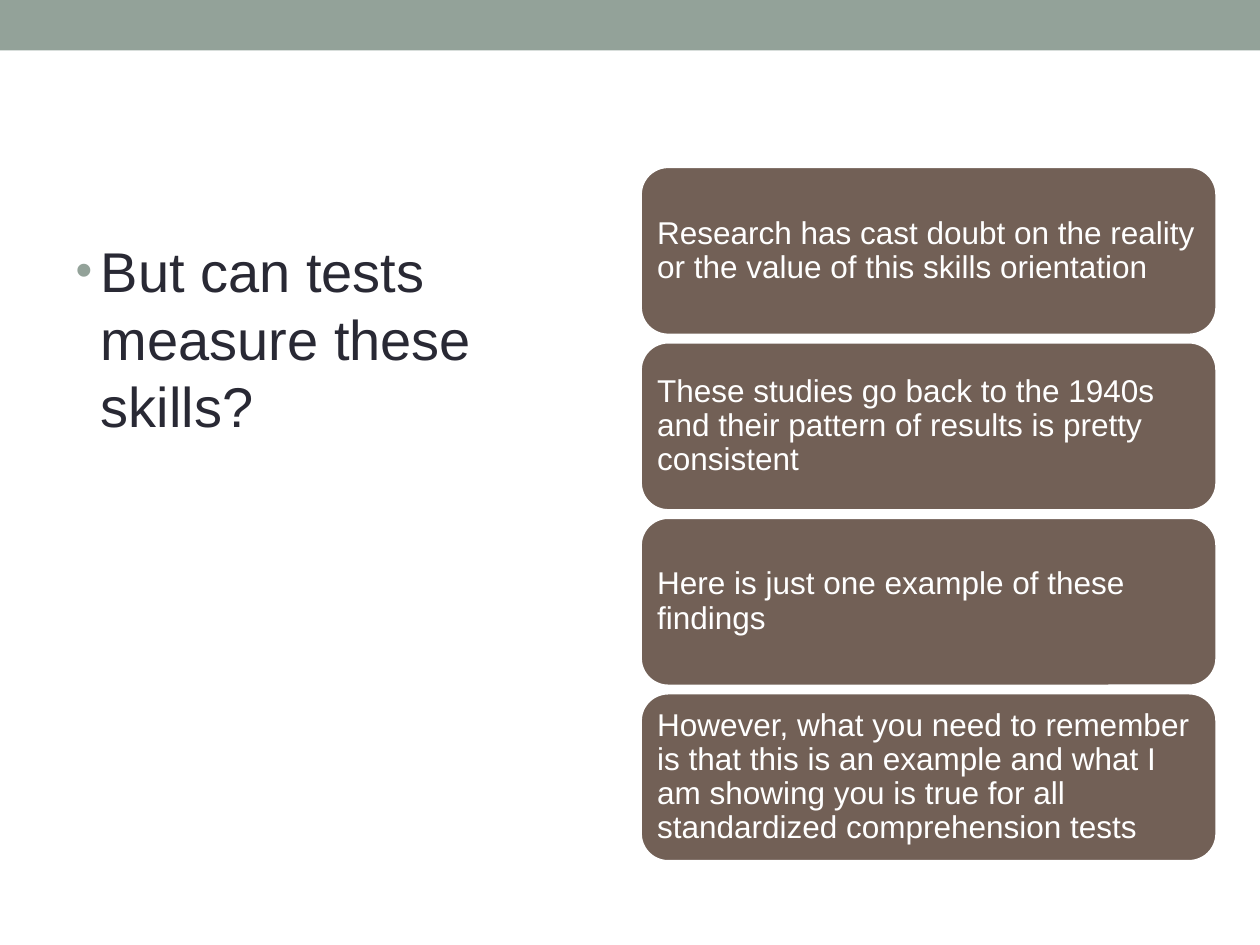
from dataclasses import dataclass

from lxml import etree
from pptx import Presentation
from pptx.dml.color import RGBColor
from pptx.enum.shapes import MSO_SHAPE
from pptx.enum.text import MSO_ANCHOR, PP_ALIGN
from pptx.oxml.ns import qn
from pptx.util import Inches, Pt

RECT = MSO_SHAPE.RECTANGLE
ROUND = MSO_SHAPE.ROUNDED_RECTANGLE
TOP, MID = MSO_ANCHOR.TOP, MSO_ANCHOR.MIDDLE
LEFT = PP_ALIGN.LEFT


@dataclass(frozen=True)
class Theme:
    font: str = "Arial"
    sage: str = "93A299"
    brown: str = "726056"
    ink: str = "292934"
    white: str = "FFFFFF"
    lead: int = 32
    card: int = 18
    edge: float = 2.08


THEME = Theme()
LEAD = "But can tests measure these skills?"
CARDS = [
    "Research has cast doubt on the reality or the value of this skills orientation",
    "These studies go back to the 1940s and their pattern of results is pretty consistent",
    "Here is just one example of these findings",
    "However, what you need to remember is that this is an example and what I am "
    "showing you is true for all standardized comprehension tests",
]


def color(code):
    return RGBColor.from_string(code)


def add_run(para, text, size, code):
    run = para.add_run()
    run.text = text
    run.font.name = THEME.font
    run.font.size = Pt(size)
    run.font.color.rgb = color(code)


def add_box(shapes, kind, box, fill):
    shape = shapes.add_shape(kind, *map(Inches, box))
    shape.shadow.inherit = False
    shape.fill.solid()
    shape.fill.fore_color.rgb = color(fill)
    shape.line.fill.background()
    return shape


def set_bullet(para, mark, code, scale, indent):
    props = para._p.get_or_add_pPr()
    props.set("marL", str(Inches(indent)))
    props.set("indent", str(-Inches(indent)))
    tint = etree.SubElement(props, qn("a:buClr"))
    etree.SubElement(tint, qn("a:srgbClr"), val=code)
    etree.SubElement(props, qn("a:buSzPct"), val=str(scale * 1000))
    etree.SubElement(props, qn("a:buFont"), typeface=THEME.font)
    etree.SubElement(props, qn("a:buChar"), char=mark)


def add_lead(body, box, text):
    body.left, body.top, body.width, body.height = map(Inches, box)
    frame = body.text_frame
    frame.word_wrap = True
    frame.vertical_anchor = TOP
    para = frame.paragraphs[0]
    para.alignment = LEFT
    para.space_before = Pt(0.2 * THEME.lead)
    set_bullet(para, "•", THEME.sage, 85, 0.2)
    add_run(para, text, THEME.lead, THEME.ink)


def add_cards(slide, box, texts, gap):
    left, top, width, height = box
    tall = (height - gap * (len(texts) - 1)) / len(texts)
    group = slide.shapes.add_group_shape()
    for row, text in enumerate(texts):
        place = (left, top + row * (tall + gap), width, tall)
        card = add_box(group.shapes, ROUND, place, THEME.brown)
        card.line.color.rgb = color(THEME.white)
        card.line.width = Pt(THEME.edge)
        frame = card.text_frame
        frame.word_wrap = True
        frame.vertical_anchor = MID
        frame.margin_left = frame.margin_right = Inches(0.07)
        frame.margin_top = frame.margin_bottom = Inches(0.07)
        para = frame.paragraphs[0]
        para.alignment = LEFT
        para.line_spacing = 0.9
        para.space_after = Pt(0.35 * THEME.card)
        add_run(para, text, THEME.card, THEME.white)


def main():
    deck = Presentation()
    deck.slide_width, deck.slide_height = Inches(10), Inches(7.5)
    slide = deck.slides.add_slide(deck.slide_layouts[1])

    # The slide has no title
    title = slide.shapes.title._element
    title.getparent().remove(title)

    # Top band
    add_box(slide.shapes, RECT, (0, 0, 10, 0.4), THEME.sage)

    # Question on the left, answers on the right
    add_lead(slide.placeholders[1], (0.5, 1.83, 4.42, 5.16), LEAD)
    add_cards(slide, (5.08, 1.32, 4.58, 5.52), CARDS, 0.05)

    deck.save("out.pptx")


if __name__ == "__main__":
    main()
